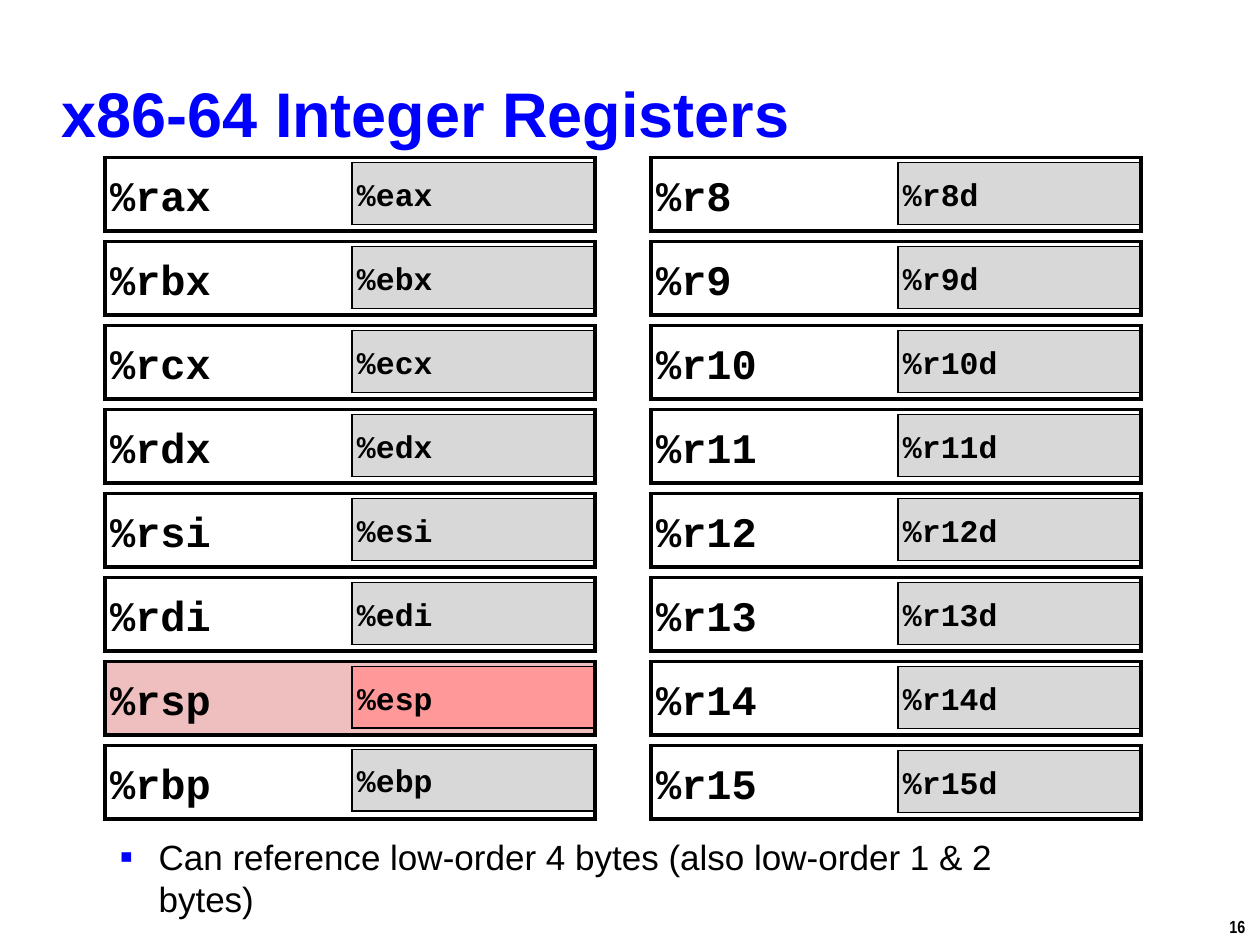
from pptx import Presentation
from pptx.dml.color import RGBColor
from pptx.enum.shapes import MSO_SHAPE
from pptx.enum.text import MSO_ANCHOR, PP_ALIGN
from pptx.oxml import parse_xml
from pptx.oxml.ns import nsdecls
from pptx.util import Inches, Pt

BLACK, BLUE, GRAY, PINK, RED = "000000", "0000FF", "D8D8D8", "EFBFBF", "FF9999"
COLUMNS = [
    (5 / 6, [("%rax", "%eax"), ("%rbx", "%ebx"), ("%rcx", "%ecx"), ("%rdx", "%edx"),
             ("%rsi", "%esi"), ("%rdi", "%edi"), ("%rsp", "%esp"), ("%rbp", "%ebp")]),
    (31 / 6, [("%r8", "%r8d"), ("%r9", "%r9d"), ("%r10", "%r10d"), ("%r11", "%r11d"),
              ("%r12", "%r12d"), ("%r13", "%r13d"), ("%r14", "%r14d"), ("%r15", "%r15d")]),
]
FIRST_TOP = 1.25
ROW_PITCH = 2 / 3
FULL_HEIGHT = 7 / 12
STACK_POINTER = "%rsp"
LOW_SHIFTS = {"%ebp": -0.01}


def color(value):
    return RGBColor.from_string(value)


def add_span(para, text, font, size, fill=BLACK, bold=False):
    span = para.add_run()
    span.text = text
    span.font.name = font
    span.font.size = Pt(size)
    span.font.bold = bold
    span.font.color.rgb = color(fill)


def add_text_box(page, left, top, width, height, wrap=True, anchor=MSO_ANCHOR.TOP):
    box = page.shapes.add_textbox(Inches(left), Inches(top), Inches(width), Inches(height))
    box.text_frame.word_wrap = wrap
    box.text_frame.vertical_anchor = anchor
    return box.text_frame.paragraphs[0]


def add_bullet(para, symbol, fill, percent):
    properties = para._p.get_or_add_pPr()
    properties.set("marL", str(Inches(0.81)))
    properties.set("indent", str(Inches(-0.31)))
    for element in (
        f'<a:buClr {nsdecls("a")}><a:srgbClr val="{fill}"/></a:buClr>',
        f'<a:buSzPct {nsdecls("a")} val="{percent * 1000}"/>',
        f'<a:buFont {nsdecls("a")} typeface="Arial"/>',
        f'<a:buChar {nsdecls("a")} char="{symbol}"/>',
    ):
        properties.append(parse_xml(element))


def draw_border(box, width):
    box.line.color.rgb = color(BLACK)
    box.line.width = Pt(width)
    miter = parse_xml(f'<a:miter {nsdecls("a")} lim="800000"/>')
    box.line._get_or_add_ln().append(miter)


def add_register(page, name, left, top, width, height, size, line_width, fill=None):
    box = page.shapes.add_shape(
        MSO_SHAPE.RECTANGLE, Inches(left), Inches(top), Inches(width), Inches(height))
    box.shadow.inherit = False
    if fill:
        box.fill.solid()
        box.fill.fore_color.rgb = color(fill)
    else:
        box.fill.background()
    draw_border(box, line_width)
    frame = box.text_frame
    frame.vertical_anchor = MSO_ANCHOR.MIDDLE
    frame.margin_left = frame.margin_right = Inches(0.04)
    frame.margin_top = frame.margin_bottom = Inches(0.04)
    para = frame.paragraphs[0]
    para.alignment = PP_ALIGN.LEFT
    add_span(para, name, "Courier New", size, bold=True)


def add_full_register(page, name, left, top, fill=None):
    add_register(page, name, left, top, 3.89, FULL_HEIGHT, 24, 2, fill)


def add_low_half(page, name, left, top, width=1.93, line_width=0.75, fill=GRAY):
    low_top = top + 0.04 + LOW_SHIFTS.get(name, 0)
    add_register(page, name, left + 1.96, low_top, width, 0.49, 18, line_width, fill)


def add_register_column(page, left, registers):
    for row, (full, low) in enumerate(registers):
        top = FIRST_TOP + row * ROW_PITCH
        if full == STACK_POINTER:
            add_full_register(page, full, left, top, PINK)
            add_low_half(page, low, left, top, 1.92, 1, RED)
        else:
            add_low_half(page, low, left, top)
            add_full_register(page, full, left, top)


def main():
    deck = Presentation()
    deck.slide_width, deck.slide_height = Inches(10), Inches(7.5)
    page = deck.slides.add_slide(deck.slide_layouts[6])

    title = add_text_box(page, 0.39, 0.48, 8.3, 0.83, anchor=MSO_ANCHOR.MIDDLE)
    add_span(title, "x86-64 Integer Registers", "Arial", 36, BLUE, True)

    for left, registers in COLUMNS:
        add_register_column(page, left, registers)

    remark = add_text_box(page, 0.35, 6.58, 8.02, 0.92)
    remark.space_before = Pt(4)
    add_bullet(remark, "▪", BLUE, 110)
    add_span(remark, "Can reference low-order 4 bytes (also low-order 1 & 2 bytes)", "Arial", 20)

    number = add_text_box(page, 9.66, 7.22, 0.34, 0.27, wrap=False)
    add_span(number, "16", "Arial Narrow", 10, bold=True)

    deck.save("out.pptx")


if __name__ == "__main__":
    main()
